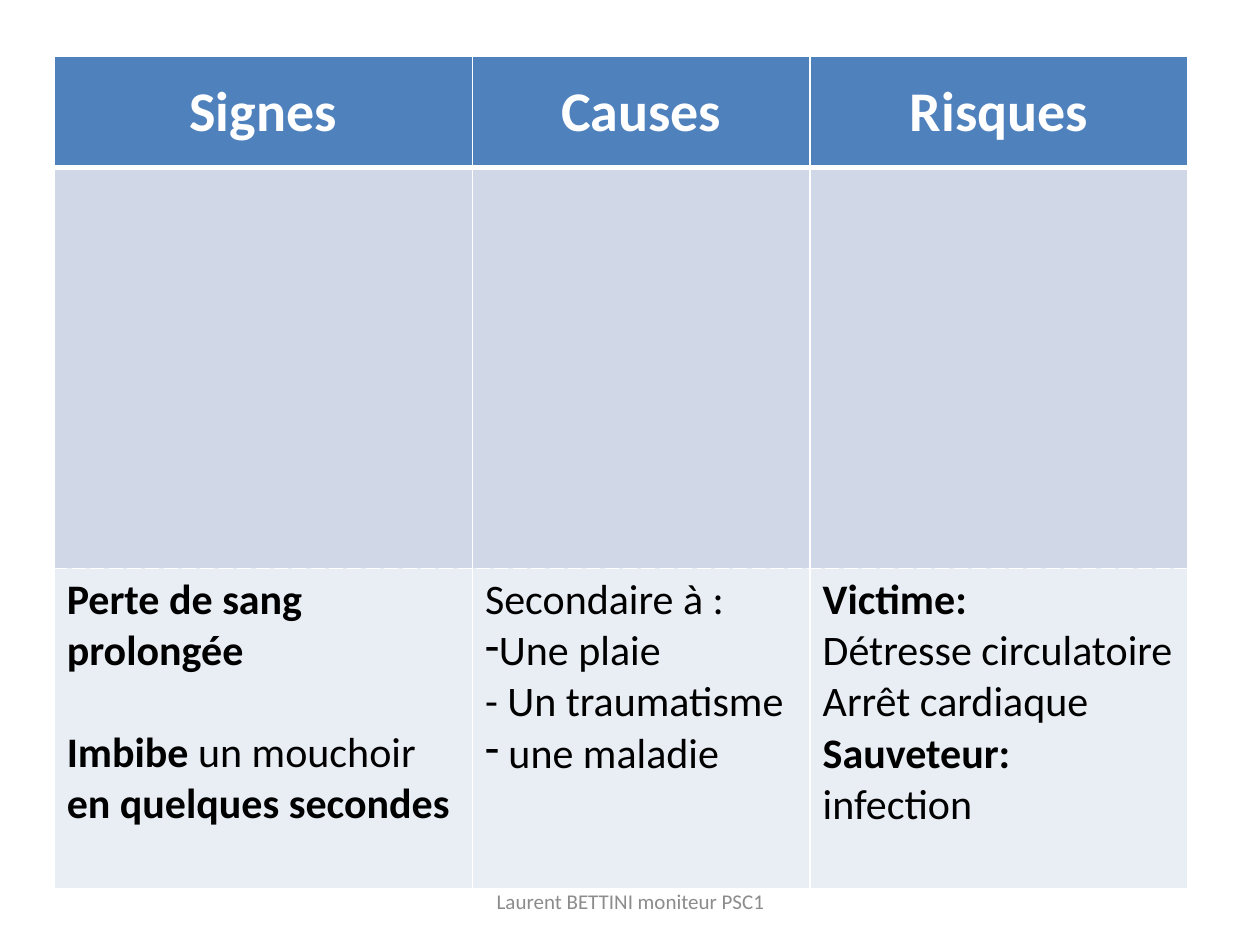
"""Build a slide with a table of signs, causes and risks of bleeding."""
import pptx
import pptx.util
from lxml import etree
from pptx.dml.color import RGBColor
from pptx.enum.text import MSO_ANCHOR, PP_ALIGN
from pptx.oxml.ns import qn
from pptx.util import Inches, Pt

COLORS = {
    "header": "4F81BD",
    "band": "D0D8E8",
    "light": "E9EDF4",
    "white": "FFFFFF",
    "black": "000000",
    "footer": "8C8C8C",
}
COLUMN_WIDTHS = [3.32, 2.68, 3]
ROW_HEIGHTS = [0.88, 3.18, 2.54]
ROW_FILLS = ["header", "band", "light"]
ROW_BORDERS = [
    {"T": (1, "solid"), "B": (3, "solid")},
    {"T": (3, "solid"), "B": (0.25, "dash")},
    {"T": (0.25, "dash"), "B": (1, "solid")},
]
HEADERS = ["Signes", "Causes", "Risques"]
DETAILS = [
    [
        {"runs": [("Perte de sang prolongée", True)]},
        {"runs": [("Imbibe ", True), ("un mouchoir", False)], "before": 29},
        {"runs": [("en quelques secondes", True)]},
    ],
    [
        {"runs": [("Secondaire à :", False)]},
        {"runs": [("Une plaie", False)], "bullet": "-"},
        {"runs": [("- Un traumatisme", False)]},
        {"runs": [(" une maladie", False)], "bullet": "-"},
    ],
    [
        {"runs": [("Victime:", True)]},
        {"runs": [("Détresse circulatoire", False)]},
        {"runs": [("Arrêt cardiaque", False)]},
        {"runs": [("Sauveteur:", True)]},
        {"runs": [("infection", False)]},
    ],
]


def color(name):
    """Return a named colour."""
    return RGBColor.from_string(COLORS[name])


def set_font(font, size, name, bold=None):
    """Set the size, colour and weight of a Calibri font."""
    font.name = "Calibri"
    font.size = Pt(size)
    font.color.rgb = color(name)
    font.bold = bold


def set_borders(cell, borders):
    """Give a cell white borders, listed as side: (width, dash)."""
    tcPr = cell._tc.get_or_add_tcPr()
    for i, side in enumerate("LRTB"):
        width, dash = borders.get(side, (1, "solid"))
        ln = etree.Element(qn("a:ln" + side), w=str(Pt(width)))
        fill = etree.SubElement(ln, qn("a:solidFill"))
        etree.SubElement(fill, qn("a:srgbClr"), val=COLORS["white"])
        etree.SubElement(ln, qn("a:prstDash"), val=dash)
        tcPr.insert(i, ln)


def set_bullet(p, char):
    """Put a bullet character directly before a paragraph."""
    pPr = p._p.get_or_add_pPr()
    pPr.set("marL", "0")
    pPr.set("indent", "0")
    bullet = etree.Element(qn("a:buChar"), char=char)
    pPr.insert(0, bullet)
    bullet.addprevious(etree.Element(qn("a:buFontTx")))


def write_line(tf, text, size, name, bold=None):
    """Write one centred line in the middle of a text frame."""
    p = tf.paragraphs[0]
    p.text = text
    p.alignment = PP_ALIGN.CENTER
    set_font(p.font, size, name, bold)


def write_details(tf, lines):
    """Write paragraphs of regular and bold runs."""
    for i, line in enumerate(lines):
        p = tf.paragraphs[0] if i == 0 else tf.add_paragraph()
        for text, bold in line["runs"]:
            r = p.add_run()
            r.text = text
            set_font(r.font, 24, "black", bold)
        if "before" in line:
            p.space_before = Pt(line["before"])
        if "bullet" in line:
            set_bullet(p, line["bullet"])


def add_table(s):
    """Add the table with its header, empty row and details."""
    frame = s.shapes.add_table(
        len(ROW_HEIGHTS), len(COLUMN_WIDTHS), Inches(0.43), Inches(0.45),
        Inches(sum(COLUMN_WIDTHS)), Inches(sum(ROW_HEIGHTS)))
    table = frame.table
    for column, width in zip(table.columns, COLUMN_WIDTHS):
        column.width = Inches(width)
    for row, height, fill, borders in zip(
            table.rows, ROW_HEIGHTS, ROW_FILLS, ROW_BORDERS):
        row.height = Inches(height)
        for cell in row.cells:
            cell.fill.solid()
            cell.fill.fore_color.rgb = color(fill)
            set_borders(cell, borders)
    for i, (header, lines) in enumerate(zip(HEADERS, DETAILS)):
        cell = table.cell(0, i)
        cell.vertical_anchor = MSO_ANCHOR.MIDDLE
        write_line(cell.text_frame, header, 32, "white", True)
        write_details(table.cell(2, i).text_frame, lines)


def add_footer(s, text):
    """Add the centred footer line."""
    sp = s.shapes.add_textbox(
        Inches(3.42), Inches(6.95), Inches(3.17), Inches(0.4))
    tf = sp.text_frame
    tf.word_wrap = True
    tf.vertical_anchor = MSO_ANCHOR.MIDDLE
    write_line(tf, text, 12, "footer")


def main():
    """Build and save the presentation."""
    prs = pptx.Presentation()
    prs.slide_width, prs.slide_height = Inches(10), Inches(7.5)
    s = prs.slides.add_slide(prs.slide_layouts[6])
    add_table(s)
    add_footer(s, "Laurent BETTINI moniteur PSC1")
    prs.save("out.pptx")


if __name__ == "__main__":
    main()
